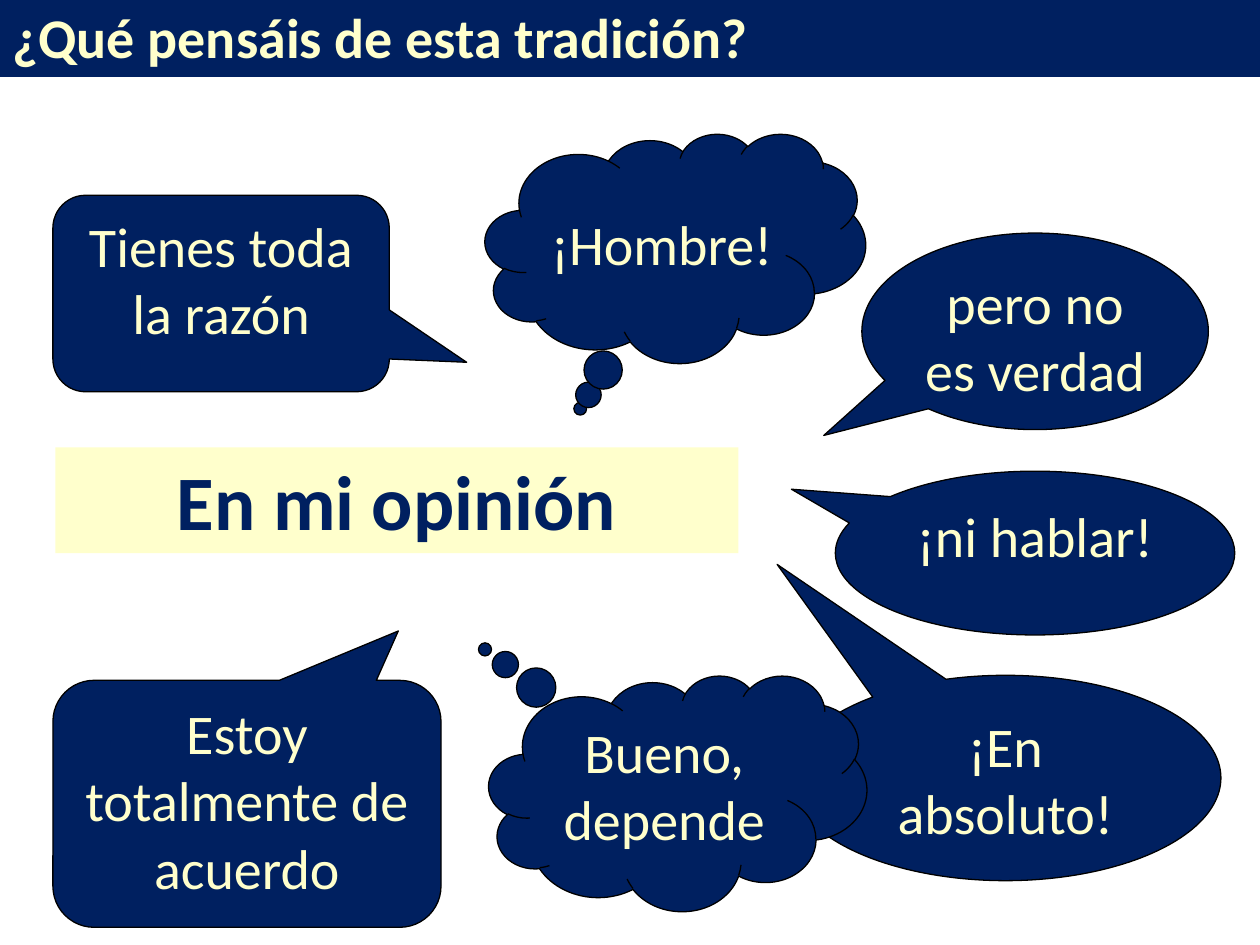
import pptx
import pptx.util
import pptx.dml.color
import pptx.enum.shapes
import pptx.enum.text

Inches = pptx.util.Inches
SHAPE = pptx.enum.shapes.MSO_SHAPE
ALIGN = pptx.enum.text.PP_ALIGN
ANCHOR = pptx.enum.text.MSO_ANCHOR

NAVY = pptx.dml.color.RGBColor(0x00, 0x20, 0x60)
CREAM = pptx.dml.color.RGBColor(0xFF, 0xFF, 0xCC)
BLACK = pptx.dml.color.RGBColor(0x00, 0x00, 0x00)


def write(holder, text, size=32, color=CREAM, bold=False, align=ALIGN.CENTER, anchor=ANCHOR.TOP):
    frame = holder.text_frame
    frame.word_wrap = True
    frame.auto_size = pptx.enum.text.MSO_AUTO_SIZE.NONE
    frame.vertical_anchor = anchor
    paragraph = frame.paragraphs[0]
    paragraph.alignment = align
    run = paragraph.add_run()
    run.text = text
    run.font.name = "Calibri"
    run.font.size = pptx.util.Pt(size)
    run.font.bold = bold
    run.font.color.rgb = color


presentation = pptx.Presentation()
presentation.slide_width = Inches(10)
presentation.slide_height = Inches(7.5)
slide = presentation.slides.add_slide(presentation.slide_layouts[5])

question = slide.shapes.title
question.left, question.top = Inches(0), Inches(-0.03)
question.width, question.height = Inches(10), Inches(0.64)
question.fill.solid()
question.fill.fore_color.rgb = NAVY
write(question, "¿Qué pensáis de esta tradición?", bold=True, align=ALIGN.LEFT)

opinion = slide.shapes.add_textbox(Inches(0.44), Inches(3.55), Inches(5.42), Inches(0.84))
opinion.fill.solid()
opinion.fill.fore_color.rgb = CREAM
write(opinion, "En mi opinión", size=44, color=NAVY, bold=True)

ellipse = SHAPE.OVAL_CALLOUT
rounded = SHAPE.ROUNDED_RECTANGULAR_CALLOUT
cloud = SHAPE.CLOUD_CALLOUT
replies = [
    ("¡ni hablar!", ellipse, (6.63, 3.74, 3.17, 1.3), (-0.61, -0.39), ANCHOR.TOP),
    ("Tienes toda la razón", rounded, (0.42, 1.55, 2.67, 1.56), (0.73, 0.35), ANCHOR.TOP),
    ("Estoy totalmente de acuerdo", rounded, (0.42, 5.4, 3.08, 1.96), (0.39, -0.7), ANCHOR.TOP),
    ("pero no es verdad", ellipse, (6.84, 1.85, 2.75, 1.56), (-0.61, 0.53), ANCHOR.TOP),
    ("¡En absoluto!", ellipse, (6.27, 5.36, 3.42, 1.63), (-0.53, -1.04), ANCHOR.TOP),
    ("¡Hombre!", cloud, (3.85, 1.06, 3.02, 1.82), (-0.25, 0.7), ANCHOR.MIDDLE),
    ("Bueno, depende", cloud, (3.88, 5.36, 3, 1.87), (-0.51, -0.61), ANCHOR.TOP),
]
for phrase, outline, box, pointer, anchor in replies:
    bubble = slide.shapes.add_shape(outline, *map(Inches, box))
    bubble.adjustments[0], bubble.adjustments[1] = pointer
    bubble.shadow.inherit = False
    bubble.fill.solid()
    bubble.fill.fore_color.rgb = NAVY
    bubble.line.color.rgb = BLACK
    bubble.line.width = pptx.util.Pt(0.75)
    write(bubble, phrase, anchor=anchor)

presentation.save("out.pptx")
